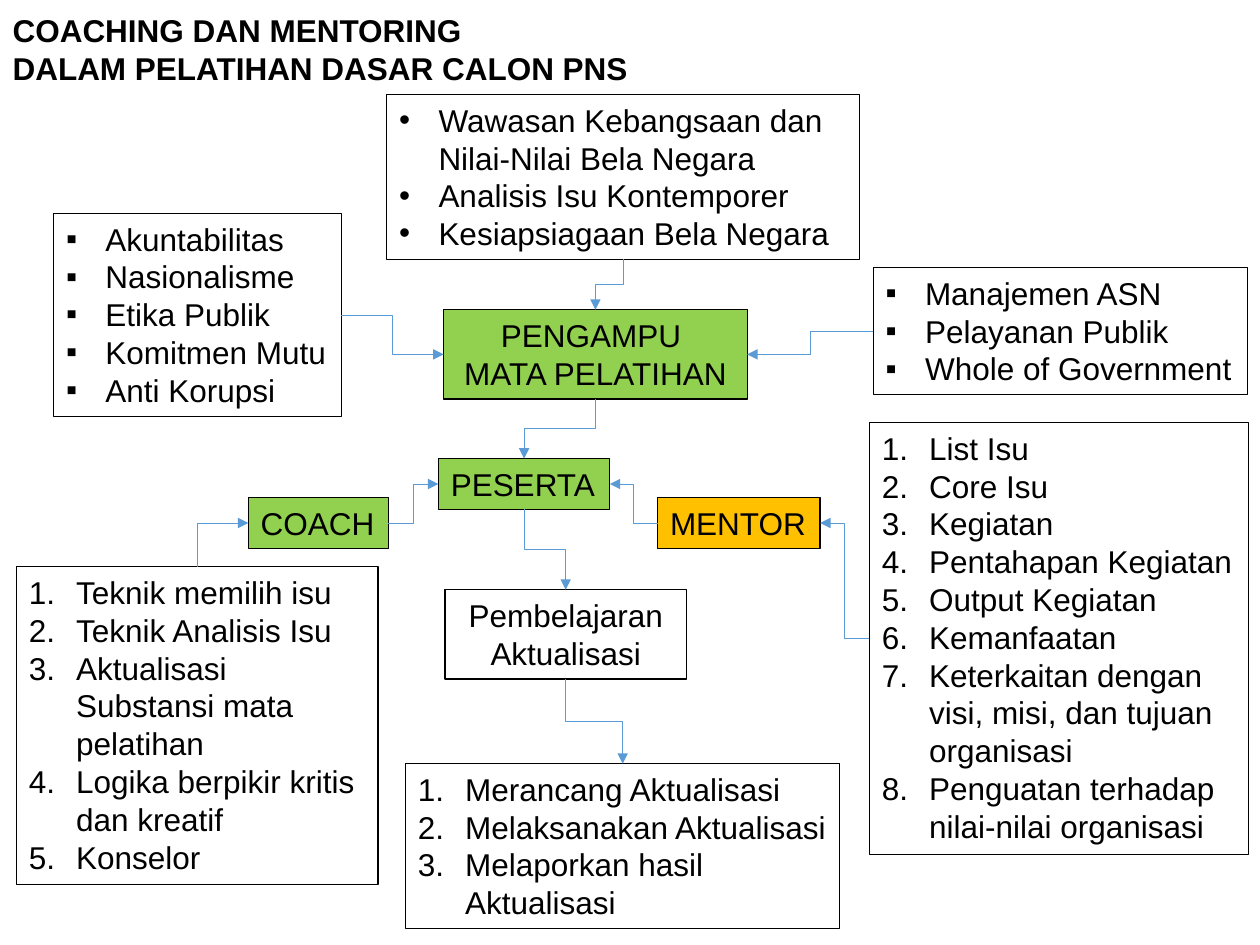
from lxml import etree
from pptx import Presentation
from pptx.dml.color import RGBColor
from pptx.enum.shapes import MSO_CONNECTOR, MSO_SHAPE
from pptx.enum.text import MSO_ANCHOR, MSO_AUTO_SIZE, PP_ALIGN
from pptx.oxml.ns import qn
from pptx.util import Pt

COLORS = {"text": "000000", "border": "000000", "arrow": "5B9BD5",
          "green": "92D050", "amber": "FFC000"}
FONT, SIZE = "Arial", 18
TOP, LEFT, BOTTOM, RIGHT = range(4)

TITLE = ["COACHING DAN MENTORING", "DALAM PELATIHAN DASAR CALON PNS"]
TITLE_BOX = (0, 2.9, 369.4, 51)

# key: (left, top, width, height), wraps, style, fill, paragraphs
BOXES = {
    "wawasan": ((221, 54, 270, 94.3), True, "•", None, [
        "Wawasan Kebangsaan dan Nilai-Nilai Bela Negara",
        "Analisis Isu Kontemporer", "Kesiapsiagaan Bela Negara"]),
    "pembelajaran": ((254.2, 337, 138.2, 51), True, "center", None,
                     ["Pembelajaran Aktualisasi"]),
    "manajemen": ((499, 152.9, 214, 72.7), False, "▪", None, [
        "Manajemen ASN", "Pelayanan Publik", "Whole of Government"]),
    "nilai": ((30.7, 121.9, 164.4, 116.3), False, "▪", None, [
        "Akuntabilitas", "Nasionalisme", "Etika Publik", "Komitmen Mutu",
        "Anti Korupsi"]),
    "mentor": ((375.8, 284.4, 92.9, 29), False, "left", "amber", ["MENTOR"]),
    "pengampu": ((253.5, 177, 173.5, 51), True, "center", "green",
                 ["PENGAMPU ", "MATA PELATIHAN"]),
    "peserta": ((250.5, 262.1, 98, 29), False, "left", "green", ["PESERTA"]),
    "coach": ((141.9, 284.4, 80, 29), False, "left", "green", ["COACH"]),
    "tahapan": ((231.7, 436.4, 248.2, 94.3), True, "number", None, [
        "Merancang Aktualisasi", "Melaksanakan Aktualisasi",
        "Melaporkan hasil Aktualisasi"]),
    "teknik": ((9.4, 323.9, 206.6, 181.5), True, "number", None, [
        "Teknik memilih isu", "Teknik Analisis Isu",
        "Aktualisasi Substansi mata pelatihan",
        "Logika berpikir kritis dan kreatif", "Konselor"]),
    "rancangan": ((496.8, 241.5, 216.6, 247), True, "number", None, [
        "List Isu", "Core Isu", "Kegiatan", "Pentahapan Kegiatan",
        "Output Kegiatan", "Kemanfaatan",
        "Keterkaitan dengan visi, misi, dan tujuan organisasi",
        "Penguatan terhadap nilai-nilai organisasi"]),
}

ARROWS = [
    ("nilai", RIGHT, "pengampu", LEFT),
    ("manajemen", LEFT, "pengampu", RIGHT),
    ("wawasan", BOTTOM, "pengampu", TOP),
    ("pengampu", BOTTOM, "peserta", TOP),
    ("peserta", BOTTOM, "pembelajaran", TOP),
    ("coach", RIGHT, "peserta", LEFT),
    ("mentor", LEFT, "peserta", RIGHT),
    ("rancangan", LEFT, "mentor", RIGHT),
    ("teknik", TOP, "coach", LEFT),
    ("pembelajaran", BOTTOM, "tahapan", TOP),
]


def color(name):
    return RGBColor.from_string(COLORS[name])


def place(shape, box):
    shape.left, shape.top, shape.width, shape.height = map(Pt, box)


def set_marker(paragraph, style):
    """Give the paragraph a hanging bullet or an automatic number."""
    props = paragraph._p.get_or_add_pPr()
    indent = Pt(27 if style == "number" else 22.5)
    props.set("marL", str(indent))
    props.set("indent", str(-indent))
    if style == "number":
        etree.SubElement(props, qn("a:buFont"), typeface="+mj-lt")
        etree.SubElement(props, qn("a:buAutoNum"), type="arabicPeriod")
    else:
        etree.SubElement(props, qn("a:buFont"), typeface=FONT)
        etree.SubElement(props, qn("a:buChar"), char=style)


def write(frame, lines, style, wraps, bold=False):
    frame.word_wrap = wraps
    frame.auto_size = MSO_AUTO_SIZE.SHAPE_TO_FIT_TEXT
    frame.vertical_anchor = MSO_ANCHOR.TOP
    for i, line in enumerate(lines):
        paragraph = frame.add_paragraph() if i else frame.paragraphs[0]
        paragraph.alignment = PP_ALIGN.CENTER if style == "center" else PP_ALIGN.LEFT
        if style not in ("left", "center"):
            set_marker(paragraph, style)
        run = paragraph.add_run()
        run.text = line
        run.font.name, run.font.size, run.font.bold = FONT, Pt(SIZE), bold
        run.font.color.rgb = color("text")


def add_box(slide, box, wraps, style, fill, lines):
    shape = slide.shapes.add_shape(MSO_SHAPE.RECTANGLE, *map(Pt, box))
    shape.shadow.inherit = False
    if fill:
        shape.fill.solid()
        shape.fill.fore_color.rgb = color(fill)
    else:
        shape.fill.background()
    shape.line.color.rgb = color("border")
    shape.line.width = Pt(0.75)
    write(shape.text_frame, lines, style, wraps)
    return shape


def turn_upright(connector, single_bend):
    """Rotate an elbow so that it leaves its start vertically."""
    dx = connector.end_x - connector.begin_x
    dy = connector.end_y - connector.begin_y
    center_x = (connector.begin_x + connector.end_x) // 2
    center_y = (connector.begin_y + connector.end_y) // 2
    connector.width, connector.height = abs(dy), abs(dx)
    connector.left = center_x - abs(dy) // 2
    connector.top = center_y - abs(dx) // 2
    rightward, upward = dx > 0, dy < 0
    quarter_turn = 90 if rightward == upward else 270
    xfrm = connector._element.spPr.find(qn("a:xfrm"))
    xfrm.set("rot", str(quarter_turn * 60000))
    xfrm.set("flipH", str(int(rightward)))
    xfrm.set("flipV", str(int(upward)))
    if single_bend:
        connector._element.spPr.find(qn("a:prstGeom")).set("prst", "bentConnector2")


def add_arrow(slide, source, source_side, target, target_side):
    connector = slide.shapes.add_connector(MSO_CONNECTOR.ELBOW, 0, 0, 0, 0)
    connector.begin_connect(source, source_side)
    connector.end_connect(target, target_side)
    if source_side in (TOP, BOTTOM):
        turn_upright(connector, target_side in (LEFT, RIGHT))
    connector.line.color.rgb = color("arrow")
    connector.line.width = Pt(0.5)
    etree.SubElement(connector.line._get_or_add_ln(), qn("a:tailEnd"), type="triangle")
    etree.SubElement(connector._element.spPr, qn("a:effectLst"))


def main():
    prs = Presentation()
    prs.slide_width, prs.slide_height = Pt(720), Pt(540)
    slide = prs.slides.add_slide(prs.slide_layouts[5])
    title = slide.shapes.title
    place(title, TITLE_BOX)
    write(title.text_frame, TITLE, "left", False, bold=True)
    boxes = {key: add_box(slide, *parts) for key, parts in BOXES.items()}
    for source, source_side, target, target_side in ARROWS:
        add_arrow(slide, boxes[source], source_side, boxes[target], target_side)
    prs.save("out.pptx")


if __name__ == "__main__":
    main()
